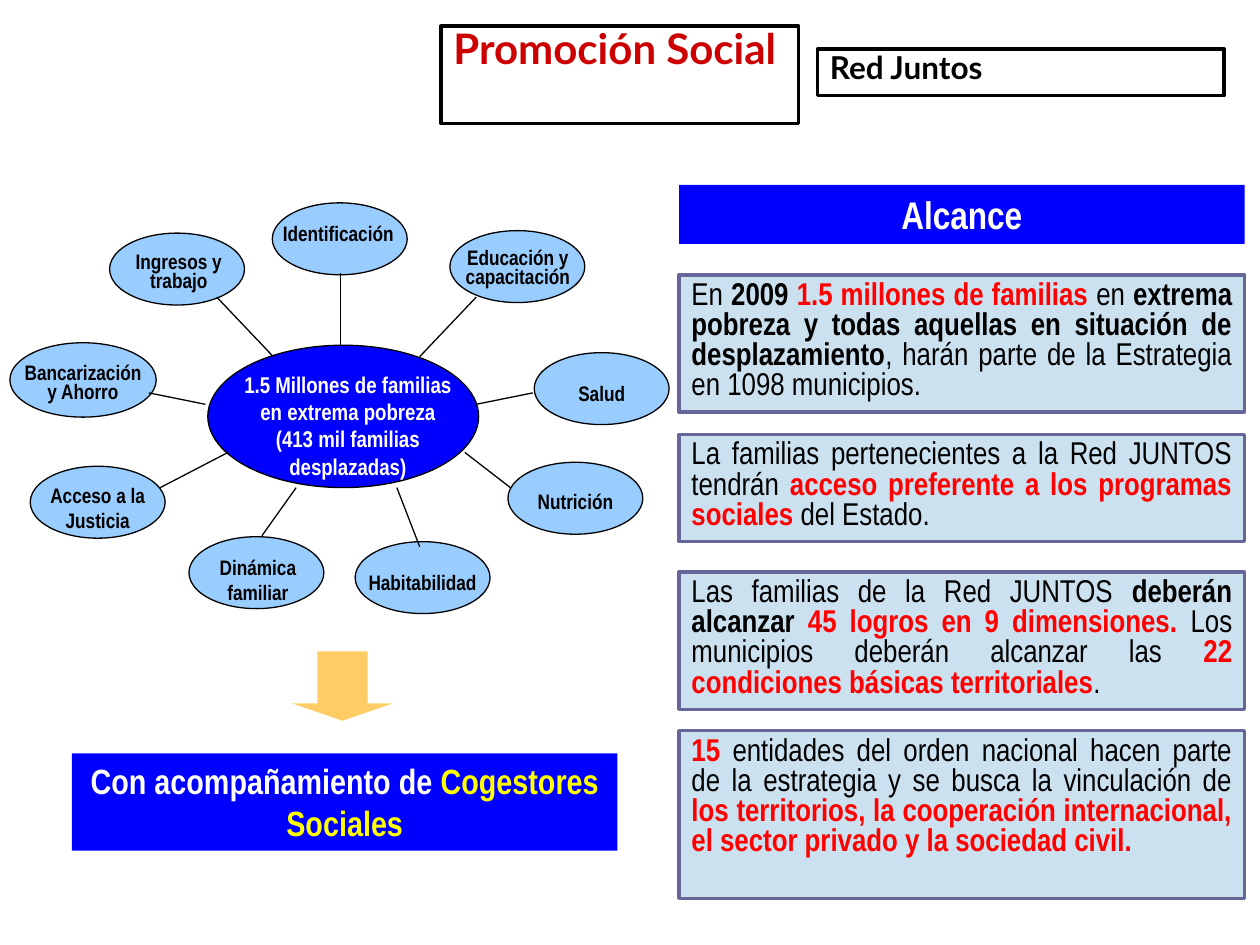
from lxml import etree
from pptx import Presentation
from pptx.dml.color import RGBColor
from pptx.enum.shapes import MSO_CONNECTOR, MSO_SHAPE
from pptx.enum.text import MSO_ANCHOR, PP_ALIGN
from pptx.oxml.ns import qn
from pptx.util import Cm, Pt

RECT, OVAL, DOWN_ARROW = MSO_SHAPE.RECTANGLE, MSO_SHAPE.OVAL, MSO_SHAPE.DOWN_ARROW
STRAIGHT = MSO_CONNECTOR.STRAIGHT
LEFT, CENTER, JUSTIFY = PP_ALIGN.LEFT, PP_ALIGN.CENTER, PP_ALIGN.JUSTIFY
TOP = MSO_ANCHOR.TOP

BODY_FONT, TITLE_FONT = "Arial Narrow", "Lato"
BLACK, WHITE, RED, YELLOW = "000000", "FFFFFF", "FF0000", "FFFF00"
BLUE, SKY, PALE, VIOLET = "0000FF", "99CCFF", "CCE1F0", "666699"
TITLE_RED, ORANGE = "CC0000", "FFCC66"

COLUMN_X, COLUMN_W = 13.69, 11.4
OVAL_W, OVAL_H = 2.72, 1.45

PLAIN, STRONG, KEY = (BLACK, False), (BLACK, True), (RED, True)

CARDS = [
    (5.54, 2.77, [
        ("En ", *PLAIN), ("2009 ", *STRONG), ("1.5 millones de familias ", *KEY),
        ("en ", *PLAIN),
        ("extrema pobreza y todas aquellas en situación de desplazamiento", *STRONG),
        (", harán parte de la Estrategia en 1098 municipios.", *PLAIN)]),
    (8.76, 2.16, [
        ("La familias pertenecientes a la Red JUNTOS tendrán ", *PLAIN),
        ("acceso preferente a los programas sociales", *KEY),
        (" del Estado.", *PLAIN)]),
    (11.53, 2.77, [
        ("Las familias de la Red JUNTOS ", *PLAIN), ("deberán alcanzar ", *STRONG),
        ("45 logros en 9 dimensiones. ", *KEY),
        ("Los municipios deberán alcanzar las ", *PLAIN),
        ("22 condiciones básicas territoriales", *KEY), (".", *PLAIN)]),
    (14.73, 3.38, [
        ("15 ", *KEY),
        ("entidades del orden nacional hacen parte de la estrategia y se busca "
         "la vinculación de ", *PLAIN),
        ("los territorios, la cooperación internacional, el sector privado y la "
         "sociedad civil.", *KEY)]),
]

DIMENSIONS = [
    ("Identificación", (5.49, 4.09, OVAL_W, OVAL_H), (5.31, 4.32, 3.02), 1),
    ("Ingresos y trabajo", (2.21, 4.7, OVAL_W, OVAL_H), (2.36, 5, 2.49), 0.75),
    ("Salud", (10.77, 7.11, OVAL_W, OVAL_H), (10.77, 7.54, OVAL_W), 1),
    ("Educación y capacitación", (9.07, 4.65, OVAL_W, OVAL_H), (9.07, 4.93, 2.74), 0.75),
    ("Bancarización y Ahorro", (0.2, 6.91, 2.95, 1.5), (0.2, 7.24, 2.95), 0.75),
    ("Dinámica familiar", (3.81, 10.82, OVAL_W, OVAL_H), (3.84, 11.05, OVAL_W), 1),
    ("Nutrición", (10.24, 9.32, OVAL_W, OVAL_H), (10.24, 9.73, OVAL_W), 1),
    ("Habitabilidad", (7.16, 10.92, OVAL_W, OVAL_H), (7.16, 11.35, OVAL_W), 1),
    ("Acceso a la Justicia", (0.61, 9.4, OVAL_W, OVAL_H), (0.61, 9.6, OVAL_W), 1),
]

SPOKES = [
    (4.37, 5.99, 5.51, 7.19), (6.86, 5.51, 6.86, 6.96), (9.6, 5.99, 8.46, 7.19),
    (10.74, 7.92, 9.6, 8.15), (10.29, 9.83, 9.37, 9.12), (8.46, 11.02, 8, 9.83),
    (5.28, 10.8, 5.97, 9.83), (3.23, 9.83, 4.6, 9.12), (3, 7.92, 4.14, 8.15),
]


def color(value):
    """Return the RGB colour for a hex string."""
    return RGBColor.from_string(value)


def write(s, paragraphs, size, align=CENTER, spacing=1, font=BODY_FONT):
    """Fill a shape with paragraphs of (text, colour, bold) runs."""
    tf = s.text_frame
    tf.word_wrap = True
    tf.vertical_anchor = TOP
    for i, runs in enumerate(paragraphs):
        p = tf.add_paragraph() if i else tf.paragraphs[0]
        p.alignment = align
        p.line_spacing = spacing
        for text, fill, bold in runs:
            r = p.add_run()
            r.text = text
            r.font.name = font
            r.font.size = Pt(size)
            r.font.bold = bold
            r.font.color.rgb = color(fill)


def add_figure(sp, kind, box, fill, line=None, width=0.75):
    """Add a filled preset shape, outlined when a line colour is given."""
    s = sp.add_shape(kind, *map(Cm, box))
    s.shadow.inherit = False
    s.fill.solid()
    s.fill.fore_color.rgb = color(fill)
    if line:
        s.line.color.rgb = color(line)
        s.line.width = Pt(width)
    else:
        s.line.fill.background()
    return s


def add_label(sp, box, paragraphs, size, spacing=1):
    """Add a centred text box."""
    write(sp.add_textbox(*map(Cm, box)), paragraphs, size, spacing=spacing)


def add_spoke(sp, ends):
    """Add a thin black line between two points."""
    s = sp.add_connector(STRAIGHT, *map(Cm, ends))
    s.line.color.rgb = color(BLACK)
    s.line.width = Pt(0.75)
    etree.SubElement(s._element.spPr, qn("a:effectLst"))


def add_title(sp, box, text, size, fill):
    """Add a framed title."""
    s = add_figure(sp, RECT, box, WHITE, BLACK, 2)
    write(s, [[(text, fill, True)]], size, LEFT, 0.8, TITLE_FONT)


def add_banner(sp, box, runs, size):
    """Add a blue banner with centred text."""
    write(add_figure(sp, RECT, box, BLUE), [runs], size)


def add_wheel(sp):
    """Add the central goal, its nine dimensions and the spokes."""
    add_figure(sp, OVAL, (4.19, 6.96, 5.46, 2.87), BLUE, BLACK)
    goal = ["1.5 Millones de familias en extrema pobreza",
            "(413 mil familias desplazadas)"]
    add_label(sp, (4.62, 7.34, 4.78, 2.16), [[(t, WHITE, True)] for t in goal], 13)
    for text, oval, (x, y, w), spacing in DIMENSIONS:
        add_figure(sp, OVAL, oval, SKY, BLACK)
        add_label(sp, (x, y, w, 0.6), [[(text, BLACK, True)]], 12, spacing)
    for ends in SPOKES:
        add_spoke(sp, ends)


def main():
    """Build the slide and save it."""
    prs = Presentation()
    prs.slide_width, prs.slide_height = Cm(25.4), Cm(19.05)
    sp = prs.slides.add_slide(prs.slide_layouts[6]).shapes
    add_title(sp, (8.89, 0.53, 7.21, 1.96), "Promoción Social", 24, TITLE_RED)
    add_title(sp, (16.48, 0.99, 8.2, 0.94), "Red Juntos", 18, BLACK)
    add_wheel(sp)
    add_figure(sp, DOWN_ARROW, (5.89, 13.13, 2.03, 1.4), ORANGE).adjustments[1] = 0.25
    add_banner(sp, (1.45, 15.19, 11, 1.96),
               [("Con acompañamiento de ", WHITE, True),
                ("Cogestores Sociales", YELLOW, True)], 20)
    add_banner(sp, (COLUMN_X, 3.73, COLUMN_W, 1.19), [("Alcance", WHITE, True)], 22)
    for y, h, runs in CARDS:
        s = add_figure(sp, RECT, (COLUMN_X, y, COLUMN_W, h), PALE, VIOLET, 2)
        write(s, [runs], 18, JUSTIFY, 0.8)
    prs.save("out.pptx")


if __name__ == "__main__":
    main()
